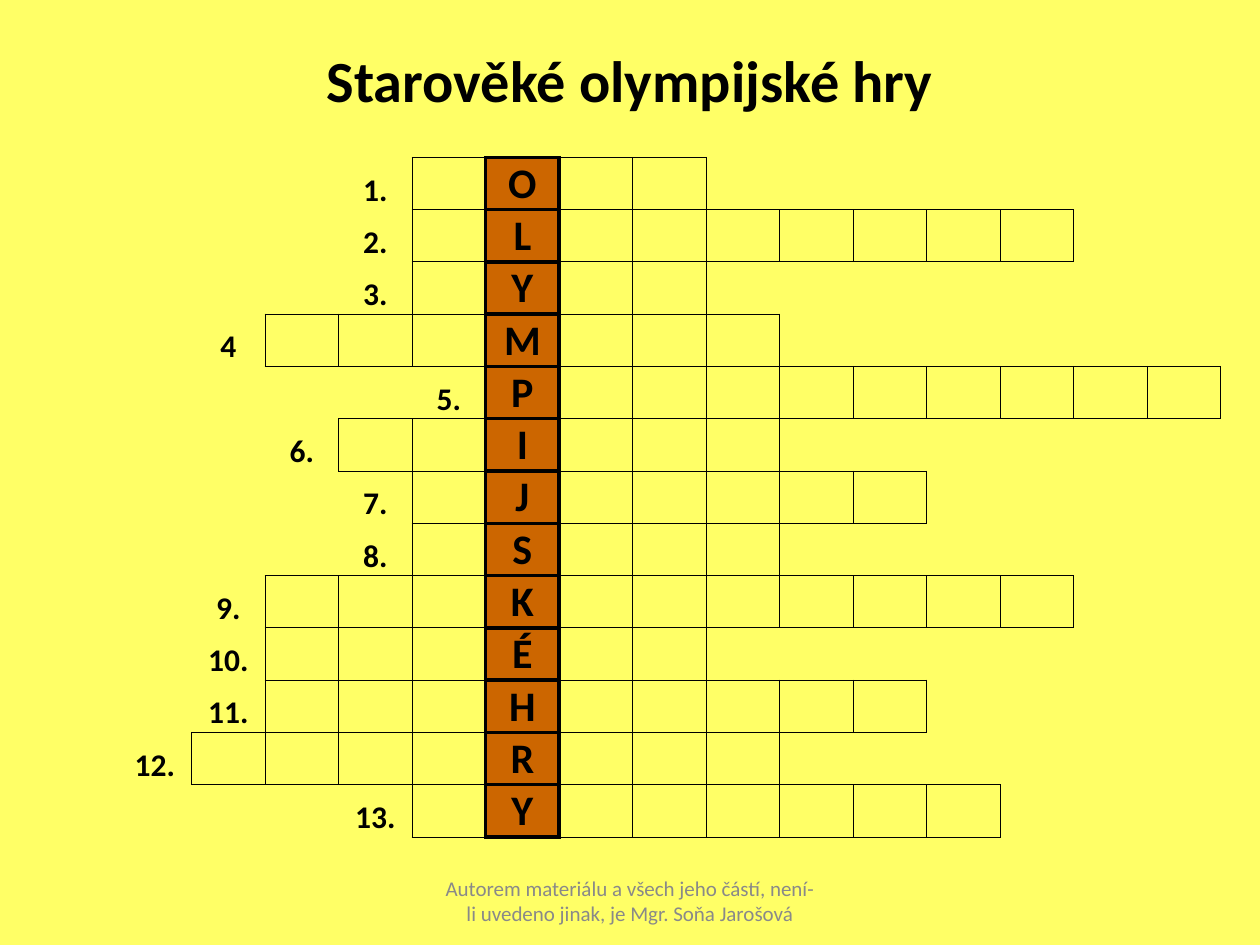
import pptx
import pptx.dml.color
import pptx.enum.text
import pptx.oxml
import pptx.oxml.ns
import pptx.util
from dataclasses import dataclass

Cm = pptx.util.Cm
Pt = pptx.util.Pt
ALIGN = pptx.enum.text.PP_ALIGN
ANCHOR = pptx.enum.text.MSO_ANCHOR


@dataclass
class Theme:
    font: str = "Calibri"
    background: str = "FFFF66"
    key_fill: str = "CC6600"
    ink: str = "000000"
    muted: str = "898989"
    title_size: float = 33.3
    key_size: float = 24
    number_size: float = 18
    footer_size: float = 12
    thin: float = 0.5
    thick: float = 2.25


class SlideBuilder:
    def __init__(self, slide, theme):
        self.slide = slide
        self.theme = theme
        fill = slide.background.fill
        fill.solid()
        fill.fore_color.rgb = self.color(theme.background)

    @staticmethod
    def color(value):
        return pptx.dml.color.RGBColor.from_string(value)

    def set_text(self, frame, text, size, color, bold):
        paragraph = frame.paragraphs[0]
        paragraph.text = text
        paragraph.alignment = ALIGN.CENTER
        font = paragraph.font
        font.name, font.size, font.bold = self.theme.font, Pt(size), bold
        font.color.rgb = self.color(color)

    def text(self, box, text, size, color, bold=False, anchor=ANCHOR.TOP):
        frame = self.slide.shapes.add_textbox(*map(Cm, box)).text_frame
        frame.word_wrap = True
        frame.vertical_anchor = anchor
        self.set_text(frame, text, size, color, bold)

    def border(self, cell, side, width):
        """Draw one cell edge; a width of 0 leaves it open."""
        paint = (f'<a:solidFill><a:srgbClr val="{self.theme.ink}"/></a:solidFill>'
                 if width else "<a:noFill/>")
        cell._tc.get_or_add_tcPr().append(pptx.oxml.parse_xml(
            f'<a:ln{side} {pptx.oxml.ns.nsdecls("a")} w="{Pt(width)}">{paint}</a:ln{side}>'))

    def crossword(self, box, words, column_count, key_column):
        theme = self.theme
        left, top, width, height = box
        table = self.slide.shapes.add_table(
            len(words), column_count, *map(Cm, box)).table
        table.first_row = table.horz_banding = False
        for column in table.columns:
            column.width = Cm(width / column_count)
        for row in table.rows:
            row.height = Cm(height / len(words))

        def weight(r, c):
            """Outline width of a square, 0 outside the words."""
            if not 0 <= r < len(words):
                return 0
            _, before, _, after = words[r]
            if c == key_column:
                return theme.thick
            return theme.thin if -before <= c - key_column <= after else 0

        for r, (number, before, letter, _) in enumerate(words):
            for c in range(column_count):
                cell = table.cell(r, c)
                cell.margin_left = cell.margin_right = cell.margin_top = Cm(0.02)
                cell.margin_bottom = 0
                cell.vertical_anchor = ANCHOR.BOTTOM
                # Neighbouring squares share the heavier outline
                for side, dr, dc in (("L", 0, -1), ("R", 0, 1), ("T", -1, 0), ("B", 1, 0)):
                    self.border(cell, side, max(weight(r, c), weight(r + dr, c + dc)))
                cell.fill.background()
                if c == key_column:
                    cell.fill.solid()
                    cell.fill.fore_color.rgb = self.color(theme.key_fill)
                    self.set_text(cell.text_frame, letter, theme.key_size, theme.ink, True)
                elif c == key_column - before - 1:
                    self.set_text(cell.text_frame, number, theme.number_size, theme.ink, True)


# Number, squares before the key letter, key letter, squares after it
WORDS = [
    ("1.", 1, "O", 2),
    ("2.", 1, "L", 7),
    ("3.", 1, "Y", 2),
    ("4", 3, "M", 3),
    ("5.", 0, "P", 9),
    ("6.", 2, "I", 3),
    ("7.", 1, "J", 5),
    ("8.", 1, "S", 3),
    ("9.", 3, "K", 7),
    ("10.", 3, "É", 2),
    ("11.", 3, "H", 5),
    ("12.", 4, "R", 3),
    ("13.", 1, "Y", 6),
]


def main():
    presentation = pptx.Presentation()
    presentation.slide_width, presentation.slide_height = Cm(25.4), Cm(19.05)
    theme = Theme()
    builder = SlideBuilder(
        presentation.slides.add_slide(presentation.slide_layouts[6]), theme)

    # Crossword
    builder.crossword((2.38, 3.17, 22.23, 13.71), WORDS, column_count=15, key_column=5)

    # Footer
    builder.text((8.68, 17.65, 8.04, 1.02),
                 "Autorem materiálu a všech jeho částí, není-li uvedeno jinak, je Mgr. Soňa Jarošová",
                 theme.footer_size, theme.muted, anchor=ANCHOR.MIDDLE)

    # Title
    builder.text((1.27, 0.76, 22.86, 1.42), "Starověké olympijské hry",
                 theme.title_size, theme.ink, bold=True)

    presentation.save("out.pptx")


if __name__ == "__main__":
    main()
